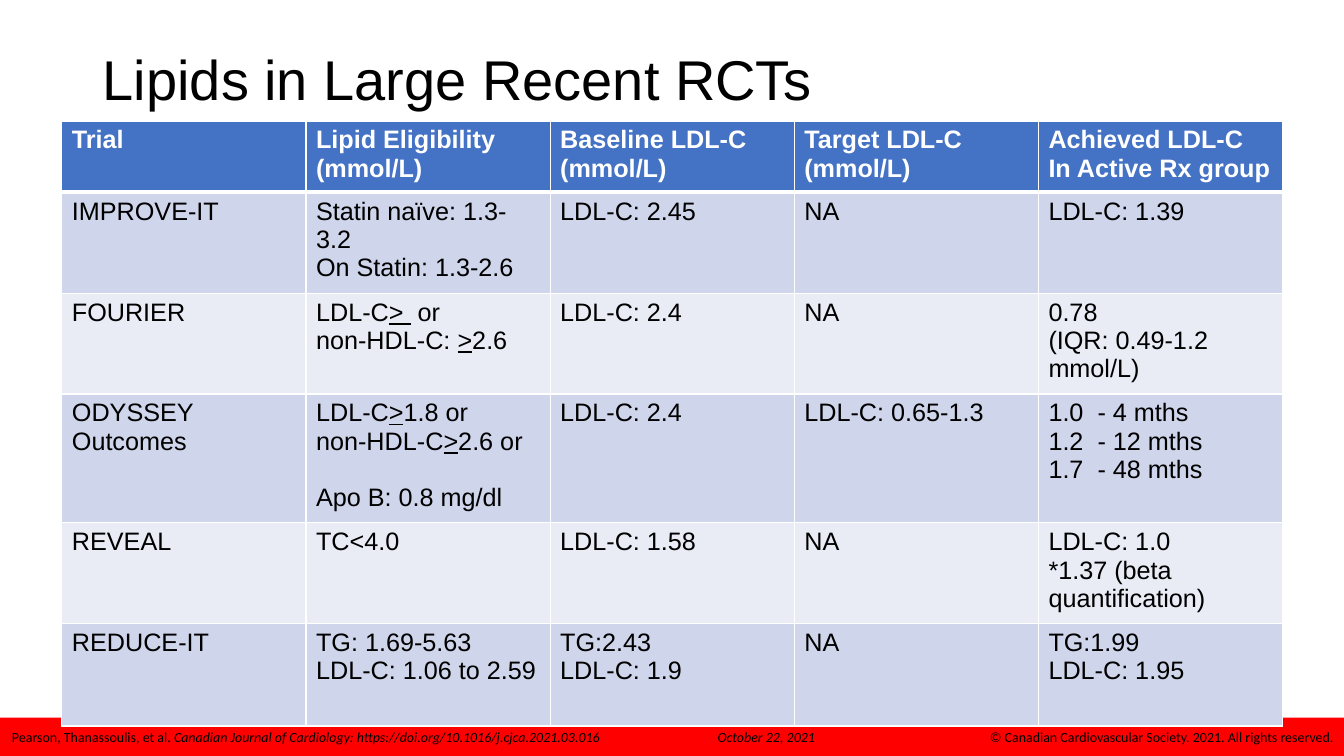
import dataclasses

import lxml.etree
import pptx
import pptx.dml.color
import pptx.enum.shapes
import pptx.enum.text
import pptx.oxml.ns
import pptx.slide
import pptx.table
import pptx.text.text
import pptx.util

Pt = pptx.util.Pt


@dataclasses.dataclass(frozen=True)
class Theme:
    face: str = "Arial"
    foot_face: str = "Calibri"
    head_size: int = 40
    cell_size: int = 18
    foot_size: int = 10
    black: str = "000000"
    white: str = "FFFFFF"
    red: str = "FF0000"
    blue: str = "4472C4"
    bands: tuple[str, str] = ("CFD5EA", "E9EBF5")


@dataclasses.dataclass(frozen=True)
class Trial:
    height: float
    name: str
    entry: str
    base: str
    target: str
    result: str

    def texts(self) -> tuple[str, ...]:
        return self.name, self.entry, self.base, self.target, self.result


@dataclasses.dataclass(frozen=True)
class Note:
    left: float
    width: float
    plain: str
    slanted: str = ""
    stop: float = 0


THEME = Theme()
COLUMN = 174.4
LINE_GAP = 20
VALUE_STOP = 35

TRIALS = [
    Trial(51, "Trial", "Lipid Eligibility (mmol/L)", "Baseline LDL-C (mmol/L)",
          "Target LDL-C (mmol/L)", "Achieved LDL-C\nIn Active Rx group"),
    Trial(68, "IMPROVE-IT", "Statin naïve: 1.3-3.2\nOn Statin: 1.3-2.6",
          "LDL-C: 2.45", "NA", "LDL-C: 1.39"),
    Trial(69, "FOURIER", "LDL-C_> _ or\nnon-HDL-C: _>_2.6",
          "LDL-C: 2.4", "NA", "0.78\n(IQR: 0.49-1.2 mmol/L)"),
    Trial(88, "ODYSSEY Outcomes",
          "LDL-C_>_1.8 or\nnon-HDL-C_>_2.6 or\n\nApo B: 0.8 mg/dl",
          "LDL-C: 2.4", "LDL-C: 0.65-1.3",
          "1.0\t- 4 mths\n1.2\t- 12 mths\n1.7\t- 48 mths"),
    Trial(69, "REVEAL", "TC<4.0", "LDL-C: 1.58", "NA",
          "LDL-C: 1.0\n*1.37 (beta quantification)"),
    Trial(73, "REDUCE-IT", "TG: 1.69-5.63\nLDL-C: 1.06 to 2.59",
          "TG:2.43\nLDL-C: 1.9", "NA", "TG:1.99\nLDL-C: 1.95"),
]

NOTES = [
    Note(1.5, 654, "Pearson, Thanassoulis, et al. ",
         "Canadian Journal of Cardiology: "
         "https://doi.org/10.1016/j.cjca.2021.03.016\tOctober 22, 2021", 504),
    Note(700, 260,
         "© Canadian Cardiovascular Society. 2021. All rights reserved."),
]


def tint(code: str) -> pptx.dml.color.RGBColor:
    return pptx.dml.color.RGBColor.from_string(code)


def add_node(root: lxml.etree._Element, tag: str, **attrs: str) -> lxml.etree._Element:
    return lxml.etree.SubElement(root, pptx.oxml.ns.qn(tag), attrs)


def style(para: pptx.text.text._Paragraph, face: str, size: int,
          code: str, bold: bool = False) -> None:
    para.font.name = face
    para.font.size = Pt(size)
    para.font.bold = bold
    para.font.color.rgb = tint(code)


def set_stop(para: pptx.text.text._Paragraph, stop: float) -> None:
    stops = add_node(para._p.get_or_add_pPr(), "a:tabLst")
    add_node(stops, "a:tab", pos=str(int(Pt(stop))), algn="l")


def write_cell(cell: pptx.table._Cell, text: str, code: str, bold: bool) -> None:
    frame = cell.text_frame
    gap = False
    for index, line in enumerate(text.split("\n")):
        if not line:
            gap = True
            continue
        para = frame.add_paragraph() if index else frame.paragraphs[0]
        if gap:
            para.space_before = Pt(LINE_GAP)
            gap = False
        if "\t" in line:
            set_stop(para, VALUE_STOP)
        style(para, THEME.face, THEME.cell_size, code, bold)
        for part, words in enumerate(line.split("_")):
            run = para.add_run()
            run.text = words
            if part % 2:
                run.font.underline = True


def set_edges(cell: pptx.table._Cell, top: float, base: float) -> None:
    props = cell._tc.get_or_add_tcPr()
    for side, width in zip("LRTB", (1, 1, top, base)):
        edge = add_node(props, f"a:ln{side}", w=str(int(Pt(width))))
        add_node(add_node(edge, "a:solidFill"), "a:srgbClr", val=THEME.white)


def add_grid(slide: pptx.slide.Slide) -> None:
    count = len(TRIALS[0].texts())
    total = sum(trial.height for trial in TRIALS)
    grid = slide.shapes.add_table(len(TRIALS), count, Pt(44.2), Pt(86.4),
                                  Pt(COLUMN * count), Pt(total)).table
    for column in grid.columns:
        column.width = Pt(COLUMN)
    for row, trial in enumerate(TRIALS):
        grid.rows[row].height = Pt(trial.height)
        head = row == 0
        for col, text in enumerate(trial.texts()):
            cell = grid.cell(row, col)
            set_edges(cell, 3 if row == 1 else 1, 3 if head else 1)
            cell.fill.solid()
            cell.fill.fore_color.rgb = tint(
                THEME.blue if head else THEME.bands[(row - 1) % 2])
            write_cell(cell, text, THEME.white if head else THEME.black, head)


def add_band(slide: pptx.slide.Slide) -> None:
    band = slide.shapes.add_shape(pptx.enum.shapes.MSO_SHAPE.RECTANGLE,
                                  Pt(0), Pt(512.6), Pt(960), Pt(27.4))
    band.shadow.inherit = False
    band.fill.solid()
    band.fill.fore_color.rgb = tint(THEME.red)
    band.line.fill.background()


def add_note(slide: pptx.slide.Slide, note: Note) -> None:
    frame = slide.shapes.add_textbox(Pt(note.left), Pt(517), Pt(note.width),
                                     Pt(19.4)).text_frame
    frame.word_wrap = True
    para = frame.paragraphs[0]
    if note.stop:
        set_stop(para, note.stop)
    style(para, THEME.foot_face, THEME.foot_size, THEME.black)
    para.add_run().text = note.plain
    if note.slanted:
        run = para.add_run()
        run.text = note.slanted
        run.font.italic = True


def set_title(slide: pptx.slide.Slide) -> None:
    title = slide.shapes.title
    title.left, title.top = Pt(66.2), Pt(6.5)
    title.width, title.height = Pt(828), Pt(104.4)
    frame = title.text_frame
    frame.text = "Lipids in Large Recent RCTs"
    frame.auto_size = pptx.enum.text.MSO_AUTO_SIZE.NONE
    frame.vertical_anchor = pptx.enum.text.MSO_ANCHOR.MIDDLE
    para = frame.paragraphs[0]
    para.alignment = pptx.enum.text.PP_ALIGN.LEFT
    para.line_spacing = 0.9
    style(para, THEME.face, THEME.head_size, THEME.black)


def main() -> None:
    deck = pptx.Presentation()
    deck.slide_width, deck.slide_height = Pt(960), Pt(540)
    slide = deck.slides.add_slide(deck.slide_layouts.get_by_name("Title Only"))
    add_band(slide)
    for note in NOTES:
        add_note(slide, note)
    set_title(slide)
    add_grid(slide)
    deck.save("out.pptx")


if __name__ == "__main__":
    main()
